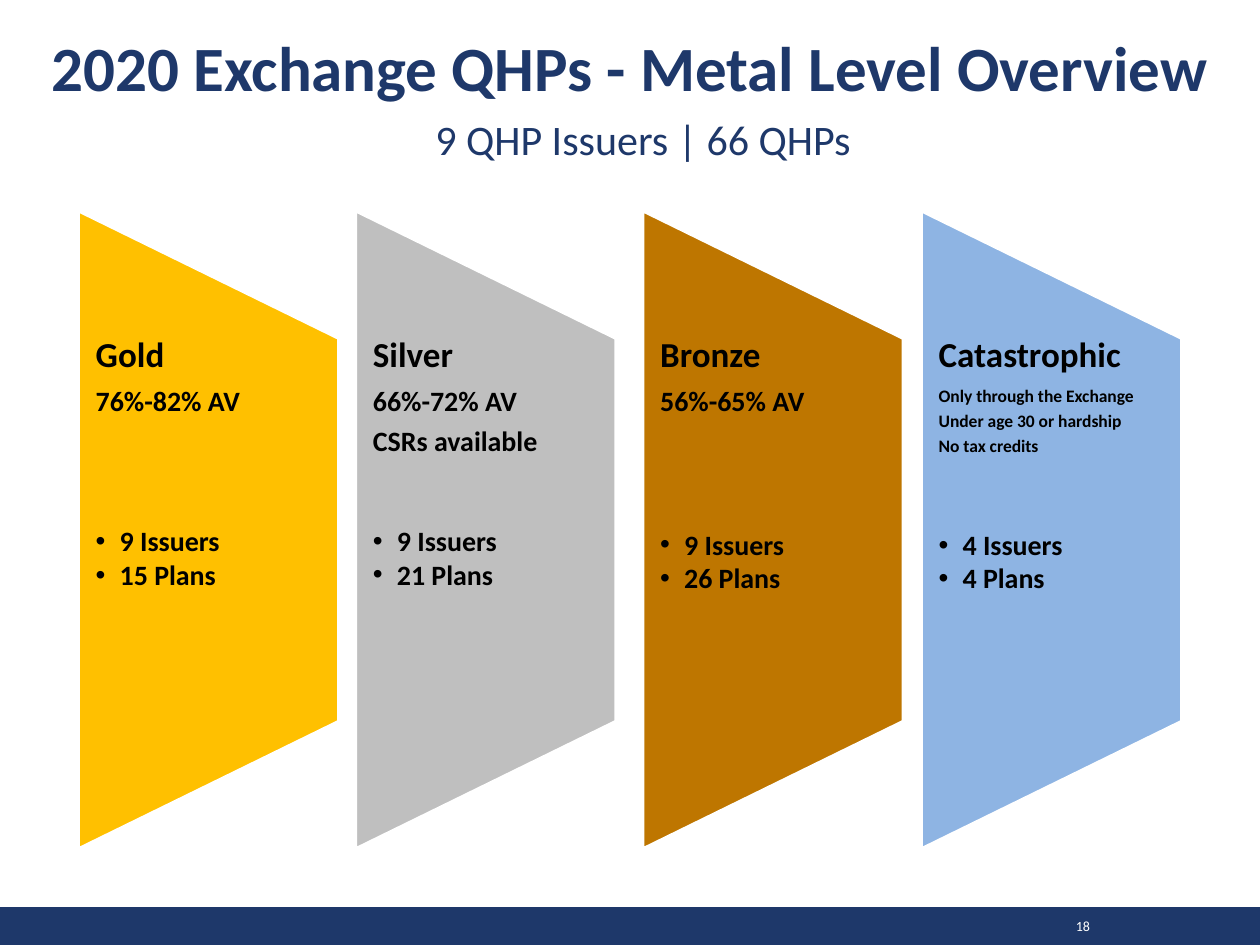
"""Build the slide of 2020 Exchange QHP metal levels."""
from lxml import etree
from pptx import Presentation
from pptx import util as u
from pptx.dml.color import RGBColor
from pptx.enum import shapes, text
from pptx.oxml.ns import qn

NAVY, WHITE, BLACK = "1E386A", "FFFFFF", "000000"


def paint(shape, fill, line=None):
    shape.shadow.inherit = False
    shape.fill.solid()
    shape.fill.fore_color.rgb = RGBColor.from_string(fill)
    if line:
        shape.line.color.rgb = RGBColor.from_string(line)
        shape.line.width = u.Pt(2)
    else:
        shape.line.fill.background()


def write(paragraph, words, size, color=BLACK, bold=False, align=text.PP_ALIGN.LEFT,
          spacing=0.9, before=0, after=0, indent=0, bullet=False):
    properties = paragraph._p.get_or_add_pPr()
    if bullet:
        properties.set("marL", str(u.Inches(0.19)))
        properties.set("indent", str(-u.Inches(0.19)))
        etree.SubElement(properties, qn("a:buFont"), typeface="Arial")
        etree.SubElement(properties, qn("a:buChar"), char="•")
    elif indent:
        properties.set("marL", str(u.Inches(indent)))
    paragraph.alignment = align
    paragraph.line_spacing = spacing
    paragraph.space_before = u.Pt(before)
    paragraph.space_after = u.Pt(after)
    run = paragraph.add_run()
    run.text = words
    run.font.name = "Calibri"
    run.font.size = u.Pt(size)
    run.font.bold = bold
    run.font.color.rgb = RGBColor.from_string(color)


deck = Presentation()
deck.slide_width, deck.slide_height = u.Inches(10), u.Inches(7.5)
slide = deck.slides.add_slide(deck.slide_layouts[6])

footer = slide.shapes.add_shape(shapes.MSO_SHAPE.RECTANGLE, 0, u.Inches(7.2), u.Inches(10), u.Inches(0.3))
paint(footer, NAVY)

center, right = text.PP_ALIGN.CENTER, text.PP_ALIGN.RIGHT
headings = [
    ("18", (8.12, 7.22, 0.63, 0.25), dict(size=8, color=WHITE, align=right, spacing=1.0)),
    ("9 QHP Issuers | 66 QHPs", (0.08, 0.85, 10, 0.55),
     dict(size=24, color=NAVY, align=center, indent=0.05)),
    ("2020 Exchange QHPs - Metal Level Overview", (0, 0.06, 10, 1.01),
     dict(size=36, color=NAVY, align=center, bold=True)),
]
for words, place, style in headings:
    frame = slide.shapes.add_textbox(*map(u.Inches, place)).text_frame
    frame.word_wrap = True
    frame.vertical_anchor = text.MSO_ANCHOR.MIDDLE
    write(frame.paragraphs[0], words, **style)

panel_width, panel_height, panel_top = 2.07, 5.07, 1.67
levels = [
    ("Gold", 0.62, "FFC000", 16, ["76%-82% AV"], 57, ["9 Issuers", "15 Plans"]),
    ("Silver", 2.82, "BFBFBF", 16, ["66%-72% AV", "CSRs available"], 34, ["9 Issuers", "21 Plans"]),
    ("Bronze", 5.1, "BE7600", 16, ["56%-65% AV"], 59, ["9 Issuers", "26 Plans"]),
    ("Catastrophic", 7.31, "8EB4E3", 10,
     ["Only through the Exchange", "Under age 30 or hardship", "No tax credits"],
     39, ["4 Issuers", "4 Plans"]),
]
for metal, left, color, detail_size, details, gap, counts in levels:
    # noqa
    turn = (panel_height - panel_width) / 2
    panel = slide.shapes.add_shape(
        shapes.MSO_SHAPE.FLOWCHART_MANUAL_OPERATION, u.Inches(left - turn), u.Inches(panel_top + turn),
        u.Inches(panel_height), u.Inches(panel_width))
    panel.rotation = 270
    paint(panel, color, WHITE)

    frame = slide.shapes.add_textbox(
        u.Inches(left), u.Inches(2.68), u.Inches(panel_width), u.Inches(3.04)).text_frame
    frame.word_wrap = True
    frame.margin_left = frame.margin_right = u.Inches(0.14)
    frame.margin_top = frame.margin_bottom = 0
    write(frame.paragraphs[0], metal, 20, bold=True, after=7)
    for detail in details:
        write(frame.add_paragraph(), detail, detail_size, bold=True, after=0.35 * detail_size)
    for count, before in zip(counts, (gap, 0)):
        write(frame.add_paragraph(), count, 16, bold=True, before=before, after=2, bullet=True)

deck.save("out.pptx")
